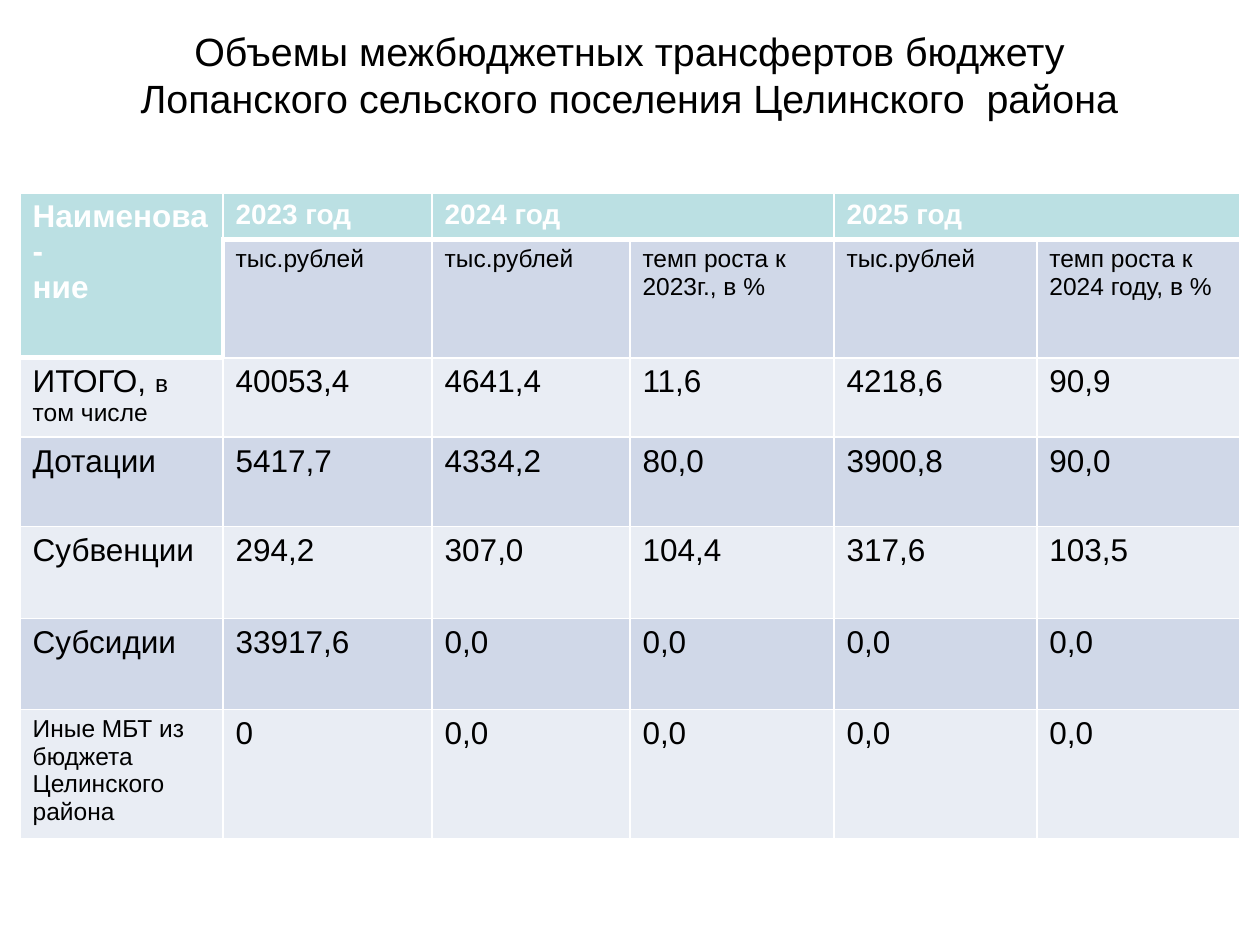
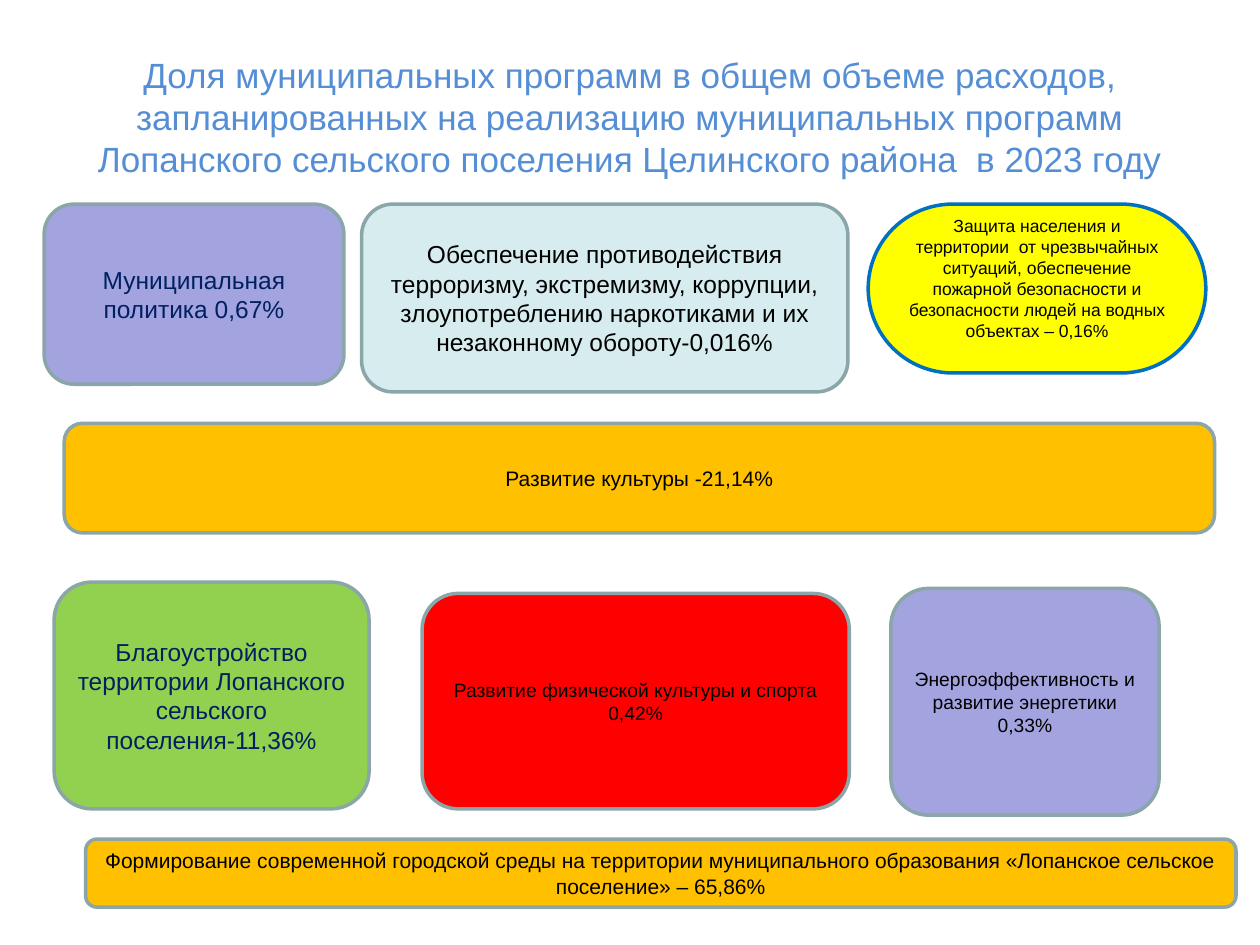
"""Build two slides on the transfers and programs of a village budget."""
from lxml import etree
from pptx import Presentation
from pptx import util as u
from pptx.dml.color import RGBColor
from pptx.enum import shapes, text
from pptx.oxml import ns

PX = 9144
FONT = "Arial"
BLACK = RGBColor(0x00, 0x00, 0x00)
WHITE = RGBColor(0xFF, 0xFF, 0xFF)
NAVY = RGBColor(0x00, 0x20, 0x60)
BLUE = RGBColor(0x55, 0x8E, 0xD5)
AZURE = RGBColor(0x00, 0x70, 0xC0)
TEAL = RGBColor(0xBB, 0xE0, 0xE3)
DARK = RGBColor(0xD0, 0xD8, 0xE8)
LIGHT = RGBColor(0xE9, 0xED, 0xF4)
EDGE = RGBColor(0x8A, 0xA6, 0xA8)
LILAC = RGBColor(0xA3, 0xA3, 0xE0)
GREEN = RGBColor(0x92, 0xD0, 0x50)
PALE = RGBColor(0xD6, 0xEC, 0xEE)
YELLOW = RGBColor(0xFF, 0xFF, 0x00)
AMBER = RGBColor(0xFF, 0xC0, 0x00)
RED = RGBColor(0xFF, 0x00, 0x00)

HEADS = ["2023 год", "2024 год", "", "2025 год", ""]
UNITS = ["", "тыс.рублей", "тыс.рублей", "темп роста к 2023г., в %",
         "тыс.рублей", "темп роста к 2024 году, в %"]
SUMS = [
    ("Дотации", "5417,7", "4334,2", "80,0", "3900,8", "90,0"),
    ("Субвенции", "294,2", "307,0", "104,4", "317,6", "103,5"),
    ("Субсидии", "33917,6", "0,0", "0,0", "0,0", "0,0"),
]
TOTAL = ["40053,4", "4641,4", "11,6", "4218,6", "90,9"]
OTHER = ["0", "0,0", "0,0", "0,0", "0,0"]
WIDTHS = [161, 166, 157, 162, 161, 161]
HEIGHTS = [37, 94, 63, 71, 73, 72, 103]
SPANS = [(0, 0, 1, 0), (0, 2, 0, 3), (0, 4, 0, 5)]

CARDS = [
    ((35, 162, 238, 143), LILAC, NAVY, 14, "Муниципальная политика 0,67%"),
    ((43, 462, 250, 180), GREEN, NAVY, 14,
     "Благоустройство территории Лопанского сельского поселения-11,36%"),
    ((287, 162, 386, 149), PALE, BLACK, 14,
     "Обеспечение противодействия терроризму, экстремизму, коррупции, "
     "злоупотреблению наркотиками и их незаконному обороту-0,016%"),
    ((707, 467, 213, 180), LILAC, BLACK, 11,
     "Энергоэффективность и развитие энергетики 0,33%"),
    ((51, 336, 913, 87), AMBER, BLACK, 12, "Развитие культуры -21,14%"),
    ((335, 471, 339, 171), RED, BLACK, 11,
     "Развитие физической культуры и спорта 0,42%"),
    ((68, 666, 913, 54), AMBER, BLACK, 12,
     "Формирование современной городской среды на территории муниципального "
     "образования «Лопанское сельское поселение» – 65,86%"),
]


def plain(words, size):
    """Return one paragraph holding one run."""
    return [[(words, size)]]


def rows():
    """Return the table rows, each cell a list of paragraphs of runs."""
    name = [[("Наименова-", 18)], [("ние", 18)]]
    total = [[("ИТОГО, ", 18), ("в том числе", 14)]]
    other = plain("Иные МБТ из бюджета Целинского района", 14)
    return [
        [name] + [plain(word, 16) for word in HEADS],
        [plain(word, 14) for word in UNITS],
        [total] + [plain(word, 18) for word in TOTAL],
        *[[plain(word, 18) for word in row] for row in SUMS],
        [other] + [plain(word, 18) for word in OTHER],
    ]


class Deck:
    """Hold the style and the current slide."""

    def __init__(self):
        self.prs = Presentation()
        self.prs.slide_width, self.prs.slide_height = 1000 * PX, 750 * PX

    def place(self, item, box):
        """Move an item to a box in px."""
        item.left, item.top, item.width, item.height = [n * PX for n in box]

    def put(self, frame, paras, color, bold=False, align=None):
        """Add paragraphs run by run."""
        for i, runs in enumerate(paras):
            para = frame.add_paragraph() if i else frame.paragraphs[0]
            para.alignment = align
            for words, size in runs:
                if not words:
                    continue
                run = para.add_run()
                run.text = words
                run.font.name = FONT
                run.font.size = u.Pt(size)
                run.font.bold = bold
                run.font.color.rgb = color

    def center(self, frame, words, size, color):
        """Put one centred text in the middle of a frame."""
        frame.word_wrap = True
        frame.auto_size = text.MSO_AUTO_SIZE.NONE
        frame.vertical_anchor = text.MSO_ANCHOR.MIDDLE
        self.put(frame, plain(words, size), color, align=text.PP_ALIGN.CENTER)

    def page(self, box, words, size, color):
        """Start a slide with its title."""
        self.slide = self.prs.slides.add_slide(self.prs.slide_layouts[5])
        title = self.slide.shapes.title
        self.place(title, box)
        self.center(title.text_frame, words, size, color)

    def card(self, box, fill, ink, size, words, edge=EDGE):
        """Add a rounded box with text."""
        shape = self.slide.shapes.add_shape(
            shapes.MSO_SHAPE.ROUNDED_RECTANGLE, *[n * PX for n in box])
        shape.shadow.inherit = False
        shape.fill.solid()
        shape.fill.fore_color.rgb = fill
        shape.line.color.rgb = edge
        shape.line.width = u.Pt(2)
        self.center(shape.text_frame, words, size, ink)
        return shape

    def border(self, cell, row, col):
        """Draw white cell edges, thick around the header."""
        thick = {"L": (row, col) == (1, 1), "R": False,
                 "T": row == 1 or (row, col) == (2, 0),
                 "B": row == 0 or (row, col) == (1, 0)}
        props = cell._tc.get_or_add_tcPr()
        for side, wide in thick.items():
            line = etree.SubElement(props, ns.qn("a:ln" + side),
                                    w=str(u.Pt(3 if wide else 1)))
            fill = etree.SubElement(line, ns.qn("a:solidFill"))
            etree.SubElement(fill, ns.qn("a:srgbClr"), val=str(WHITE))

    def table(self, spot, data):
        """Add the table with its header, bands and merged cells."""
        size = (sum(WIDTHS), sum(HEIGHTS))
        grid = self.slide.shapes.add_table(
            len(data), len(WIDTHS), *[n * PX for n in spot + size]).table
        for col, width in zip(grid.columns, WIDTHS):
            col.width = width * PX
        for line, height in zip(grid.rows, HEIGHTS):
            line.height = height * PX
        for r, row in enumerate(data):
            for c, paras in enumerate(row):
                cell = grid.cell(r, c)
                head = r == 0 or (r, c) == (1, 0)
                self.border(cell, r, c)
                cell.fill.solid()
                cell.fill.fore_color.rgb = TEAL if head else DARK if r % 2 else LIGHT
                self.put(cell.text_frame, paras, WHITE if head else BLACK, head)
        for top, left, low, right in SPANS:
            grid.cell(top, left).merge(grid.cell(low, right))


def main():
    """Build and save both slides."""
    deck = Deck()
    deck.page((75, 16, 850, 86),
              "Объемы межбюджетных трансфертов бюджету "
              "Лопанского сельского поселения Целинского  района", 22.5, BLACK)
    deck.table((16, 153), rows())

    deck.page((50, 30, 900, 125),
              "Доля муниципальных программ в общем объеме расходов, "
              "запланированных на реализацию муниципальных программ "
              "Лопанского сельского поселения Целинского района  в 2023 году",
              20, BLUE)
    for card in CARDS:
        deck.card(*card)
    pill = deck.card((689, 162, 268, 134), YELLOW, BLACK, 10,
                     "Защита населения и территории  от чрезвычайных ситуаций, "
                     "обеспечение пожарной безопасности и безопасности людей "
                     "на водных объектах – 0,16%", AZURE)
    pill.adjustments[0] = 0.5
    pill.text_frame.margin_bottom = 21 * PX
    deck.prs.save("out.pptx")


if __name__ == "__main__":
    main()
